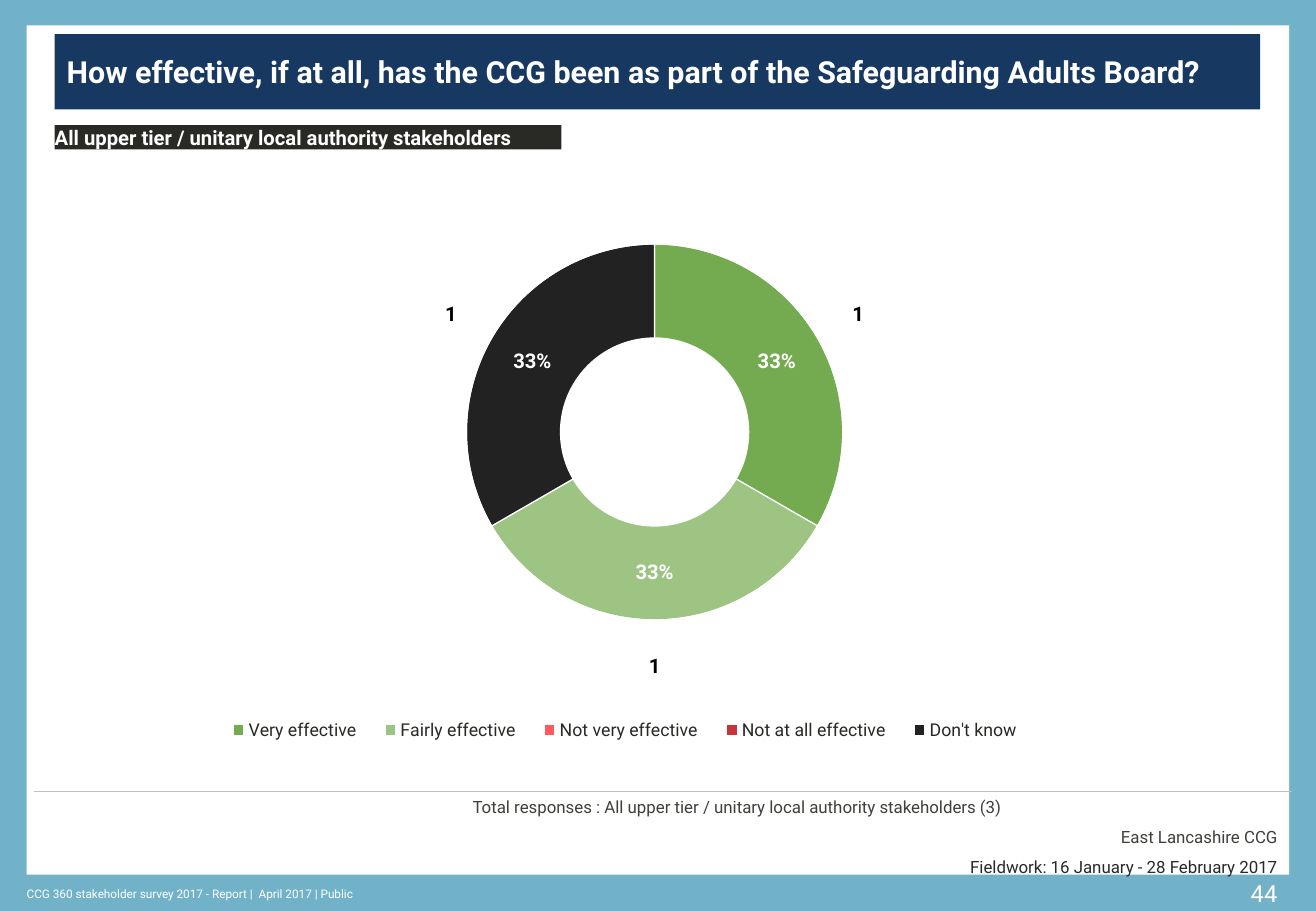
from lxml import etree
from pptx import Presentation
from pptx.chart.data import CategoryChartData
from pptx.dml.color import RGBColor
from pptx.enum.chart import XL_CHART_TYPE, XL_LEGEND_POSITION
from pptx.enum.shapes import MSO_CONNECTOR, MSO_SHAPE
from pptx.enum.text import MSO_ANCHOR, PP_ALIGN
from pptx.oxml.ns import qn
from pptx.util import Inches, Pt

DOUGHNUT = XL_CHART_TYPE.DOUGHNUT
LEGEND_BOTTOM = XL_LEGEND_POSITION.BOTTOM
RECTANGLE = MSO_SHAPE.RECTANGLE
STRAIGHT = MSO_CONNECTOR.STRAIGHT
TOP, MIDDLE = MSO_ANCHOR.TOP, MSO_ANCHOR.MIDDLE
LEFT, RIGHT = PP_ALIGN.LEFT, PP_ALIGN.RIGHT

SLIDE_WIDTH, SLIDE_HEIGHT = Inches(10.83), Inches(7.5)
FONT = "Roboto"
WHITE, DARK, GREY = "FFFFFF", "292926", "3F3F3B"
NO_INSETS = (0, 0, 0, 0)
USUAL_INSETS = (0.1, 0.05, 0.1, 0.05)

ANSWERS = {
    "Very effective": (33, 1, "74AA50"),
    "Fairly effective": (33, 1, "9DC482"),
    "Not very effective": (0, 0, "FF585D"),
    "Not at all effective": (0, 0, "CB333B"),
    "Don't know": (33, 1, "222223"),
}


def color(hex_code):
    return RGBColor.from_string(hex_code)


def across(percent):
    return round(SLIDE_WIDTH * percent / 100)


def down(percent):
    return round(SLIDE_HEIGHT * percent / 100)


def place(left, top, width, height):
    return across(left), down(top), across(width), down(height)


def set_format(target, values):
    for name, value in values.items():
        setattr(target, name, value)


def set_font(font, size, hex_code, bold=False):
    set_format(font, {"name": FONT, "size": Pt(size), "bold": bold})
    font.color.rgb = color(hex_code)


def write(frame, lines, size, hex_code, bold=False, anchor=TOP, insets=USUAL_INSETS):
    sides = ("margin_left", "margin_top", "margin_right", "margin_bottom")
    set_format(frame, dict(zip(sides, map(Inches, insets))))
    set_format(frame, {"word_wrap": True, "vertical_anchor": anchor})
    for index, (words, alignment) in enumerate(lines):
        paragraph = frame.add_paragraph() if index else frame.paragraphs[0]
        set_format(paragraph, {"text": words, "alignment": alignment})
        if index:
            paragraph.space_before = Pt(6)
        set_font(paragraph.font, size, hex_code, bold)


def add_panel(slide, area, fill):
    panel = slide.shapes.add_shape(RECTANGLE, *place(*area))
    panel.shadow.inherit = False
    panel.fill.solid()
    panel.fill.fore_color.rgb = color(fill)
    panel.line.fill.background()
    return panel


def add_banner(slide, area, fill, words, size, insets):
    banner = add_panel(slide, area, fill)
    write(banner.text_frame, [(words, LEFT)], size, WHITE, True, MIDDLE, insets)


def add_text(slide, area, lines, size, hex_code, **options):
    box = slide.shapes.add_textbox(*place(*area))
    write(box.text_frame, lines, size, hex_code, **options)


def add_rule(slide, start, end, height):
    rule = slide.shapes.add_connector(
        STRAIGHT, across(start), down(height), across(end), down(height))
    rule.line.color.rgb = color("BFBFBF")
    rule.line.width = Pt(0.25)
    etree.SubElement(rule._element.spPr, qn("a:effectLst"))


def set_layout(parent, position, values):
    for old in parent.findall(qn("c:layout")):
        parent.remove(old)
    layout = etree.Element(qn("c:layout"))
    manual = etree.SubElement(layout, qn("c:manualLayout"))
    for name, value in values.items():
        etree.SubElement(manual, qn(f"c:{name}")).set("val", str(value))
    parent.insert(position, layout)


def style_ring(ring, fills, label_color, number_format):
    for index, fill in enumerate(fills):
        segment = ring.points[index].format
        if fill:
            segment.fill.solid()
            segment.fill.fore_color.rgb = color(fill)
        else:
            segment.fill.background()
        segment.line.color.rgb = color(WHITE)
        segment.line.width = Pt(0.75)
    labels = ring.data_labels
    set_format(labels, {"show_value": True, "show_percentage": False,
                        "number_format": number_format,
                        "number_format_is_linked": False})
    set_font(labels.font, 12, label_color, True)


def add_answer_rings(slide, area):
    shares, counts, fills = zip(*ANSWERS.values())
    data = CategoryChartData()
    data.categories = list(ANSWERS)
    data.add_series("Series 1", shares)
    data.add_series("Series 2", counts)
    chart = slide.shapes.add_chart(DOUGHNUT, *place(*area), data).chart
    set_format(chart, {"has_title": False, "has_legend": True})
    set_font(chart.font, 18, DARK)
    set_format(chart.legend, {"position": LEGEND_BOTTOM, "include_in_layout": False})
    set_font(chart.legend.font, 10.5, DARK)
    rings = chart.plots[0]
    rings.vary_by_categories = True
    style_ring(rings.series[0], fills, WHITE, '0"%";;;')
    style_ring(rings.series[1], [None] * len(fills), "000000", "0;;;")

    root = chart._chartSpace
    root.find(".//" + qn("c:holeSize")).set("val", "38")
    set_layout(root.find(".//" + qn("c:plotArea")), 0, {
        "layoutTarget": "inner", "xMode": "edge", "yMode": "edge",
        "x": 0.283, "y": 0, "w": 0.429, "h": 0.881})
    set_layout(root.find(".//" + qn("c:legend")), 1, {
        "xMode": "edge", "yMode": "edge",
        "x": 0.16, "y": 0.87, "w": 0.63, "h": 0.07})


def main():
    deck = Presentation()
    set_format(deck, {"slide_width": SLIDE_WIDTH, "slide_height": SLIDE_HEIGHT})
    slide = deck.slides.add_slide(deck.slide_layouts[6])
    slide.background.fill.solid()
    slide.background.fill.fore_color.rgb = color("71B2C9")

    add_panel(slide, (2.03, 2.8, 95.94, 93.2), WHITE)
    add_text(slide, (93.91, 95.87, 4.06, 4.53), [("44", RIGHT)], 14, WHITE,
             insets=(0, 0.05, 0.1, 0.05))
    add_text(slide, (2.03, 96.8, 49.4, 2.67),
             [("CCG 360 stakeholder survey 2017 - Report |  April 2017 | Public", LEFT)],
             7, WHITE, anchor=MIDDLE, insets=NO_INSETS)
    add_rule(slide, 2.59, 98.15, 86.8)
    add_banner(slide, (4.16, 3.73, 91.6, 8.27), "173861",
               "How effective, if at all, has the CCG been as part of the "
               "Safeguarding Adults Board?", 18, USUAL_INSETS)
    add_answer_rings(slide, (0, 16.4, 100, 70.4))
    add_banner(slide, (4.16, 13.73, 38.5, 2.67), DARK,
               "All upper tier / unitary local authority stakeholders", 12, NO_INSETS)
    add_text(slide, (35, 86.8, 62.97, 5.07),
             [("Total responses : All upper tier / unitary local authority "
               "stakeholders (3)", LEFT), ("East Lancashire CCG", RIGHT)], 10, GREY)
    add_text(slide, (70.36, 94, 26.68, 2.27),
             [("Fieldwork: 16 January - 28 February 2017", RIGHT)], 10, DARK,
             insets=NO_INSETS)
    deck.save("out.pptx")


if __name__ == "__main__":
    main()
